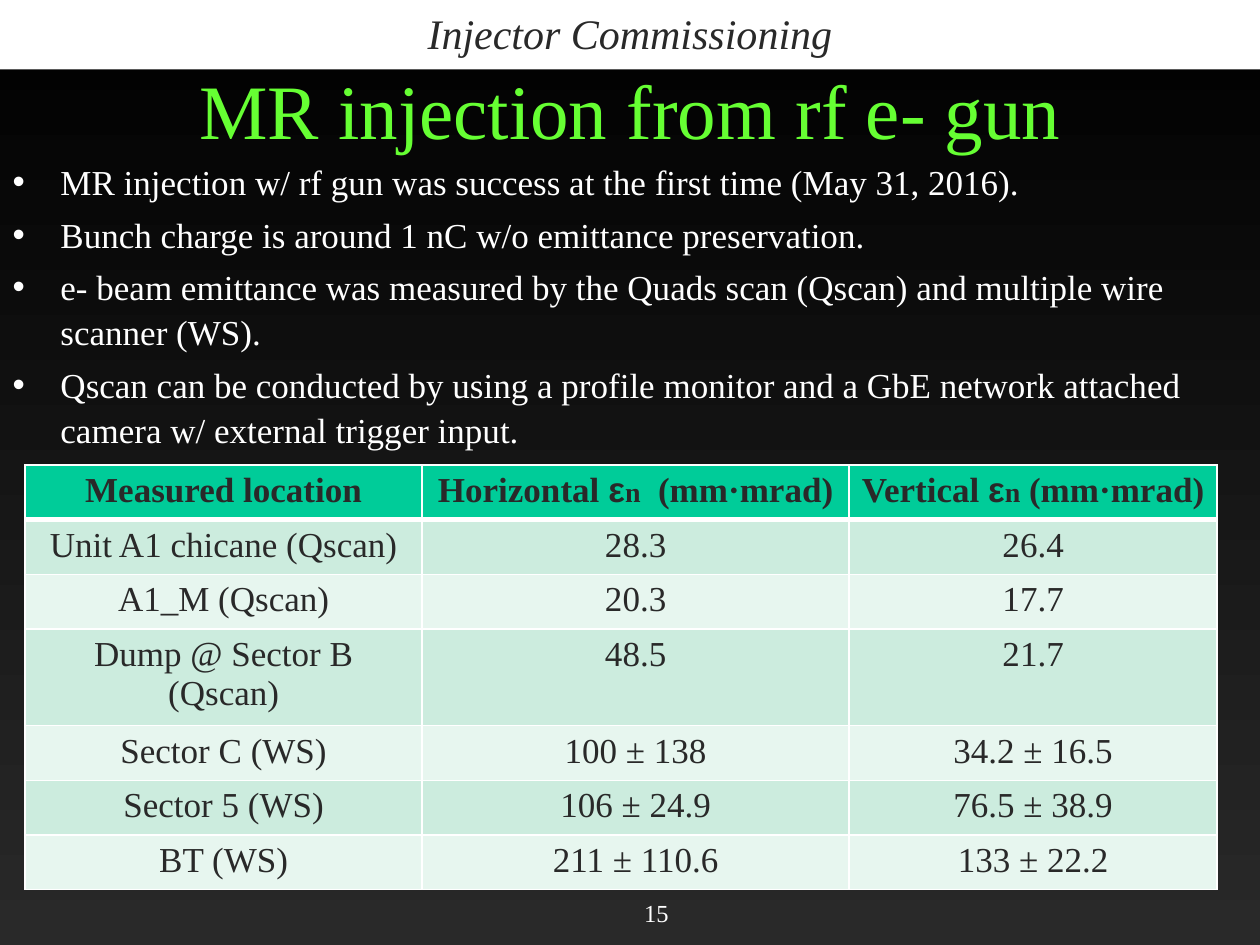
from lxml.etree import SubElement
from pptx import Presentation
from pptx.dml.color import RGBColor
from pptx.enum.shapes import MSO_SHAPE
from pptx.enum.text import MSO_ANCHOR, MSO_AUTO_SIZE, PP_ALIGN
from pptx.oxml.ns import qn
from pptx.util import Inches, Pt

WIDE, HIGH = Inches(10), Inches(7.5)
FACE = "Times New Roman"
WHITE, INK, LIME, HEAD = "FFFFFF", "292929", "66FF33", "00CC99"
BANDS = ["CCECDE", "E7F6EF"]
COLS = [31.5, 33.9, 29.2]
ROWS = [5.47, 5.47, 5.47, 9.6, 5.47, 5.73, 5.47]
POINTS = [
    "MR injection w/ rf gun was success at the first time (May 31, 2016).",
    "Bunch charge is around 1 nC w/o emittance preservation.",
    "e- beam emittance was measured by the Quads scan (Qscan) and multiple wire scanner (WS).",
    "Qscan can be conducted by using a profile monitor and a GbE network attached "
    "camera w/ external trigger input.",
]
SYMBOL = [("ε", "Arial", 20), ("n", FACE, 16)]
HEADS = [
    [("Measured location", FACE, 20)],
    [("Horizontal ", FACE, 20), *SYMBOL, ("  (mm·mrad)", FACE, 20)],
    [("Vertical ", FACE, 20), *SYMBOL, (" (mm·mrad)", FACE, 20)],
]
DATA = [
    ["Unit A1 chicane (Qscan)", "28.3", "26.4"],
    ["A1_M (Qscan)", "20.3", "17.7"],
    ["Dump @ Sector B (Qscan)", "48.5", "21.7"],
    ["Sector C (WS)", "100 ± 138", "34.2 ± 16.5"],
    ["Sector 5 (WS)", "106 ± 24.9", "76.5 ± 38.9"],
    ["BT (WS)", "211 ± 110.6", "133 ± 22.2"],
]


def tint(code):
    """Turn a hex string into a colour."""
    return RGBColor.from_string(code)


def across(share):
    """Turn a percentage of the slide's width into a length."""
    return int(WIDE * share / 100)


def down(share):
    """Turn a percentage of the slide's height into a length."""
    return int(HIGH * share / 100)


def area(left, top, width, height):
    """Turn percentages of the slide into a position and a size."""
    return across(left), down(top), across(width), down(height)


def place(shape, box):
    """Move a placeholder to a box."""
    shape.left, shape.top, shape.width, shape.height = box


def write(para, text, size, color, face=FACE, bold=False, italic=False):
    """Add one run to a paragraph."""
    run = para.add_run()
    run.text = text
    font = run.font
    font.name, font.size, font.bold, font.italic = face, Pt(size), bold, italic
    font.color.rgb = tint(color)


def center(frame, text, size, color, italic=False):
    """Fill a frame with one centred line."""
    frame.word_wrap = True
    para = frame.paragraphs[0]
    para.alignment = PP_ALIGN.CENTER
    write(para, text, size, color, italic=italic)


def shade(slide):
    """Fill the background from black down to dark grey."""
    fill = slide.background.fill
    fill.gradient()
    fill.gradient_angle = 270
    for stop, color, spot in zip(fill.gradient_stops, ("000000", INK), (0, 1)):
        stop.color.rgb, stop.position = tint(color), spot


def banner(slide, text):
    """Draw the white strip with the section name."""
    strip = slide.shapes.add_shape(MSO_SHAPE.RECTANGLE, *area(-0.4, -0.4, 100.8, 7.73))
    strip.shadow.inherit = False
    strip.fill.solid()
    strip.fill.fore_color.rgb = tint(WHITE)
    strip.line.fill.background()
    strip.text_frame.vertical_anchor = MSO_ANCHOR.MIDDLE
    center(strip.text_frame, text, 24, INK, italic=True)


def title(slide, text):
    """Fill the title placeholder."""
    shape = slide.shapes.title
    place(shape, area(2.8, 6.93, 94.5, 9.07))
    frame = shape.text_frame
    frame.auto_size = MSO_AUTO_SIZE.NONE
    frame.vertical_anchor = MSO_ANCHOR.MIDDLE
    center(frame, text, 44, LIME)


def points(slide, lines):
    """Fill the body placeholder with a bulleted list."""
    shape = slide.placeholders[1]
    place(shape, area(0, 16, 98, 32))
    frame = shape.text_frame
    frame.auto_size = MSO_AUTO_SIZE.NONE
    for row, text in enumerate(lines):
        para = frame.add_paragraph() if row else frame.paragraphs[0]
        props = para._p.get_or_add_pPr()
        props.set("marL", str(Inches(0.38)))
        props.set("indent", str(-Inches(0.38)))
        SubElement(props, qn("a:buClr")).append(props.makeelement(qn("a:srgbClr"), {"val": WHITE}))
        SubElement(props, qn("a:buFont"), typeface="Arial")
        SubElement(props, qn("a:buChar"), char="•")
        para.line_spacing = 1.08
        para.space_before = Pt(4 if row else 0)
        write(para, text, 20, WHITE)


def edge(cell, row):
    """Draw white borders, thicker below the head row."""
    props = cell._tc.get_or_add_tcPr()
    wide = {"lnT": 3 if row == 1 else 1, "lnB": 1 if row else 3}
    for side in ("lnL", "lnR", "lnT", "lnB"):
        line = SubElement(props, qn(f"a:{side}"), w=str(Pt(wide.get(side, 1))))
        SubElement(SubElement(line, qn("a:solidFill")), qn("a:srgbClr"), val=WHITE)


def table(slide, heads, data):
    """Build the table of emittances."""
    box = area(2, 49.2, sum(COLS), sum(ROWS))
    grid = slide.shapes.add_table(len(ROWS), len(COLS), *box).table
    for col, share in zip(grid.columns, COLS):
        col.width = across(share)
    for row, share in zip(grid.rows, ROWS):
        row.height = down(share)
    body = [[[(text, FACE, 20)] for text in line] for line in data]
    for row, line in enumerate([heads, *body]):
        for col, runs in enumerate(line):
            cell = grid.cell(row, col)
            edge(cell, row)
            cell.fill.solid()
            cell.fill.fore_color.rgb = tint(BANDS[(row - 1) % 2] if row else HEAD)
            para = cell.text_frame.paragraphs[0]
            para.alignment = PP_ALIGN.CENTER
            for text, face, size in runs:
                write(para, text, size, INK, face, bold=row == 0)


def number(slide, text):
    """Add the page number."""
    shape = slide.shapes.add_textbox(*area(41.7, 94.4, 20.8, 3.33))
    center(shape.text_frame, text, 14, WHITE)


def main():
    """Build and save the slide."""
    deck = Presentation()
    deck.slide_width, deck.slide_height = WIDE, HIGH
    slide = deck.slides.add_slide(deck.slide_layouts[1])
    shade(slide)
    banner(slide, "Injector Commissioning")
    title(slide, "MR injection from rf e- gun")
    points(slide, POINTS)
    number(slide, "15")
    table(slide, HEADS, DATA)
    deck.save("out.pptx")


if __name__ == "__main__":
    main()
